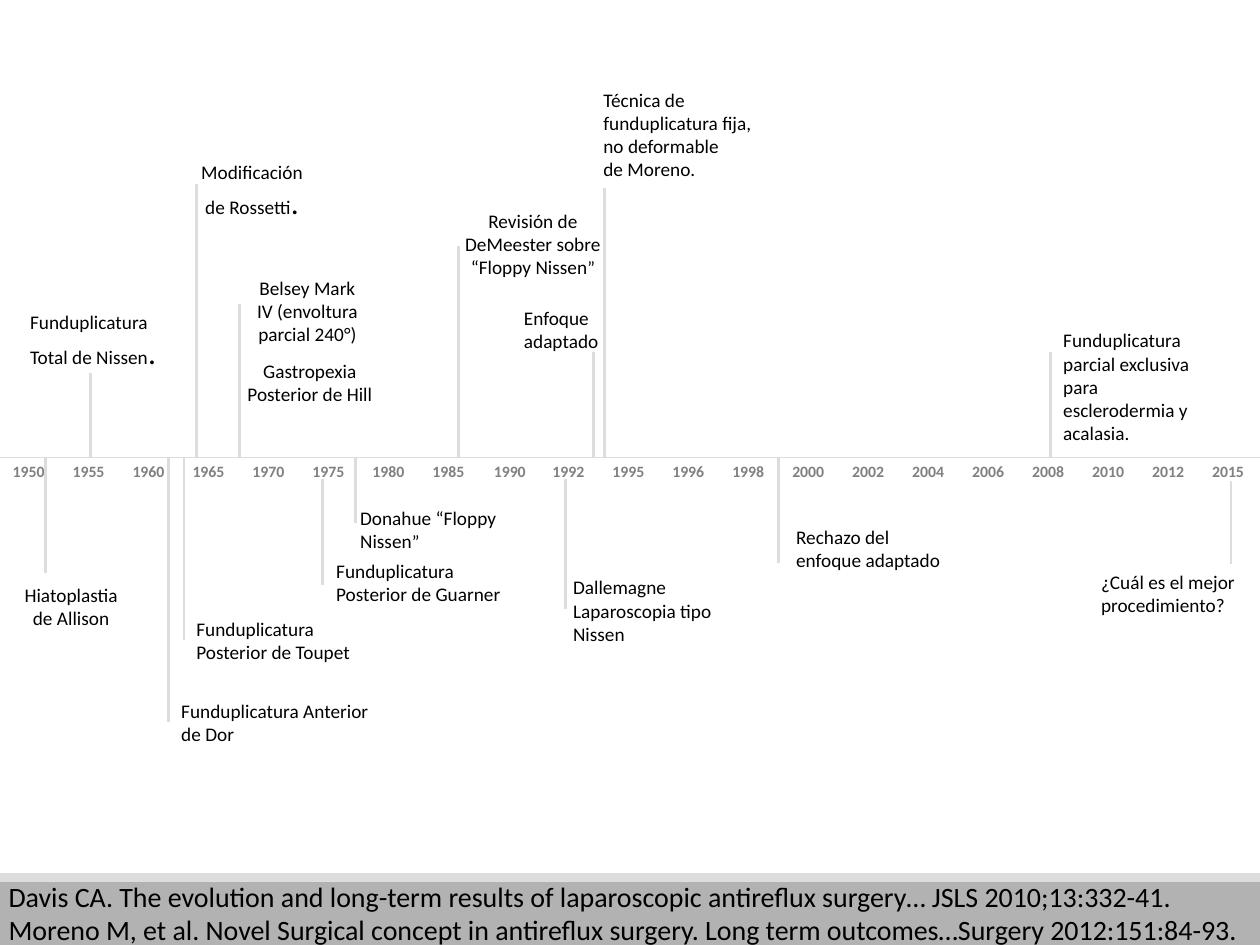
from lxml import etree
from pptx import Presentation
from pptx.dml.color import RGBColor
from pptx.enum.shapes import MSO_CONNECTOR, MSO_SHAPE
from pptx.enum.text import PP_ALIGN
from pptx.oxml.ns import qn
from pptx.util import Pt

PX = 9144
SLIDE_W, SLIDE_H = 1000, 750
AXIS_Y = 363
LEFT, CENTER = PP_ALIGN.LEFT, PP_ALIGN.CENTER
STRAIGHT, RECTANGLE = MSO_CONNECTOR.STRAIGHT, MSO_SHAPE.RECTANGLE
FONT = "Calibri"
BLACK = RGBColor(0x00, 0x00, 0x00)
WHITE = RGBColor(0xFF, 0xFF, 0xFF)
YEAR_GRAY = RGBColor(0x80, 0x80, 0x80)
LINE_GRAY = RGBColor(0xDD, 0xDD, 0xDD)
FOOTER_GRAY = RGBColor(0xB2, 0xB2, 0xB2)

YEARS = [1950, 1955, 1960, 1965, 1970, 1975, 1980, 1985, 1990, 1992, 1995,
         1996, 1998, 2000, 2002, 2004, 2006, 2008, 2010, 2012, 2015]
CENTERED_YEAR = 1990

# text, (closing mark, its size), alignment, box, stem (x, from, to)
EVENTS = [
    ("Funduplicatura Total de Nissen", (".", 18), LEFT,
     (14, 241, 121, 59), (72, 296, AXIS_Y)),
    ("Funduplicatura Anterior de Dor", None, LEFT,
     (134, 550, 173, 47), (134, AXIS_Y, 573)),
    ("Funduplicatura Posterior de Toupet", None, LEFT,
     (146, 485, 173, 47), (146, AXIS_Y, 508)),
    ("Modificación de Rossetti", (".", 18), CENTER,
     (146, 122, 108, 59), (156, 146, AXIS_Y)),
    ("Belsey Mark IV (envoltura parcial 240°)", None, CENTER,
     (190, 214, 108, 66), (190, 241, AXIS_Y)),
    ("Gastropexia Posterior de Hill", None, CENTER,
     (186, 280, 120, 47), None),
    ("Funduplicatura Posterior de Guarner", None, LEFT,
     (257, 439, 173, 47), (256, 380, 464)),
    ("Donahue “Floppy Nissen", ("”", 10.5), LEFT,
     (276, 397, 173, 47), (282, AXIS_Y, 415)),
    ("Revisión de DeMeester sobre “Floppy Nissen", ("”", 10.5), CENTER,
     (355, 161, 136, 66), (364, 195, AXIS_Y)),
    ("Dallemagne Laparoscopia tipo Nissen", None, LEFT,
     (445, 452, 136, 66), (449, 380, 483)),
    ("Enfoque\nadaptado", None, LEFT,
     (406, 238, 136, 47), (471, 279, AXIS_Y)),
    ("Rechazo del enfoque adaptado", None, LEFT,
     (622, 412, 136, 47), (618, AXIS_Y, 447)),
    ("Funduplicatura parcial exclusiva para esclerodermia y acalasia.", None, LEFT,
     (834, 256, 136, 103), (834, 279, AXIS_Y)),
    ("¿Cuál es el mejor procedimiento?", None, LEFT,
     (864, 448, 136, 47), (977, 382, 448)),
    ("Hiatoplastia de Allison", None, CENTER,
     (3, 458, 107, 47), (36, AXIS_Y, 455)),
    ("Técnica de funduplicatura fija, no deformable\nde Moreno.", None, LEFT,
     (469, 65, 149, 84), (480, 149, AXIS_Y)),
]

REFERENCES = (
    "Davis CA. The evolution and long-term results of laparoscopic antireflux "
    "surgery… JSLS 2010;13:332-41.\n"
    "Moreno M, et al. Novel Surgical concept in antireflux surgery. Long term "
    "outcomes…Surgery 2012:151:84-93."
)
FOOTER_BANDS = [((0, 700, SLIDE_W, 50), FOOTER_GRAY), ((0, 693, SLIDE_W, 7), LINE_GRAY)]


def emu(*lengths):
    return [length * PX for length in lengths]


def style_font(font, size, color=BLACK, bold=False):
    font.name, font.size, font.bold = FONT, Pt(size), bold
    font.color.rgb = color


def add_line(slide, start, end, width):
    line = slide.shapes.add_connector(STRAIGHT, *emu(*start, *end))
    line.line.color.rgb = LINE_GRAY
    line.line.width = Pt(width)
    etree.SubElement(line._element.spPr, qn("a:effectLst"))


def add_label(slide, text, box, size, align=LEFT, closing=None):
    label = slide.shapes.add_textbox(*emu(*box))
    frame = label.text_frame
    frame.word_wrap = True
    frame.text = text
    for paragraph in frame.paragraphs:
        paragraph.alignment = align
        for run in paragraph.runs:
            style_font(run.font, size)
    if closing:
        mark, mark_size = closing
        run = frame.paragraphs[-1].add_run()
        run.text = mark
        style_font(run.font, mark_size)
    return label


def add_years(slide):
    table = slide.shapes.add_table(1, len(YEARS), *emu(0, 362, SLIDE_W, 26)).table
    for column, year in enumerate(YEARS):
        table.columns[column].width = SLIDE_W * PX // len(YEARS)
        cell = table.cell(0, column)
        cell.fill.background()
        cell.text = str(year)
        paragraph = cell.text_frame.paragraphs[0]
        paragraph.alignment = CENTER if year == CENTERED_YEAR else LEFT
        style_font(paragraph.runs[0].font, 9, YEAR_GRAY, True)


def main():
    deck = Presentation()
    deck.slide_width, deck.slide_height = emu(SLIDE_W, SLIDE_H)
    slide = deck.slides.add_slide(deck.slide_layouts[6])

    for box, color in FOOTER_BANDS:
        band = slide.shapes.add_shape(RECTANGLE, *emu(*box))
        band.shadow.inherit = False
        band.fill.solid()
        band.fill.fore_color.rgb = color
        band.line.fill.background()

    add_years(slide)
    add_line(slide, (0, AXIS_Y), (SLIDE_W, AXIS_Y), 1)

    for text, closing, align, box, stem in EVENTS:
        label = add_label(slide, text, box, 11, align, closing)
        if stem:
            label.fill.solid()
            label.fill.fore_color.rgb = WHITE
            x, top, bottom = stem
            add_line(slide, (x, top), (x, bottom), 1.5)

    add_label(slide, REFERENCES, (-3, 693, 1003, 64), 16)
    deck.save("out.pptx")


if __name__ == "__main__":
    main()
